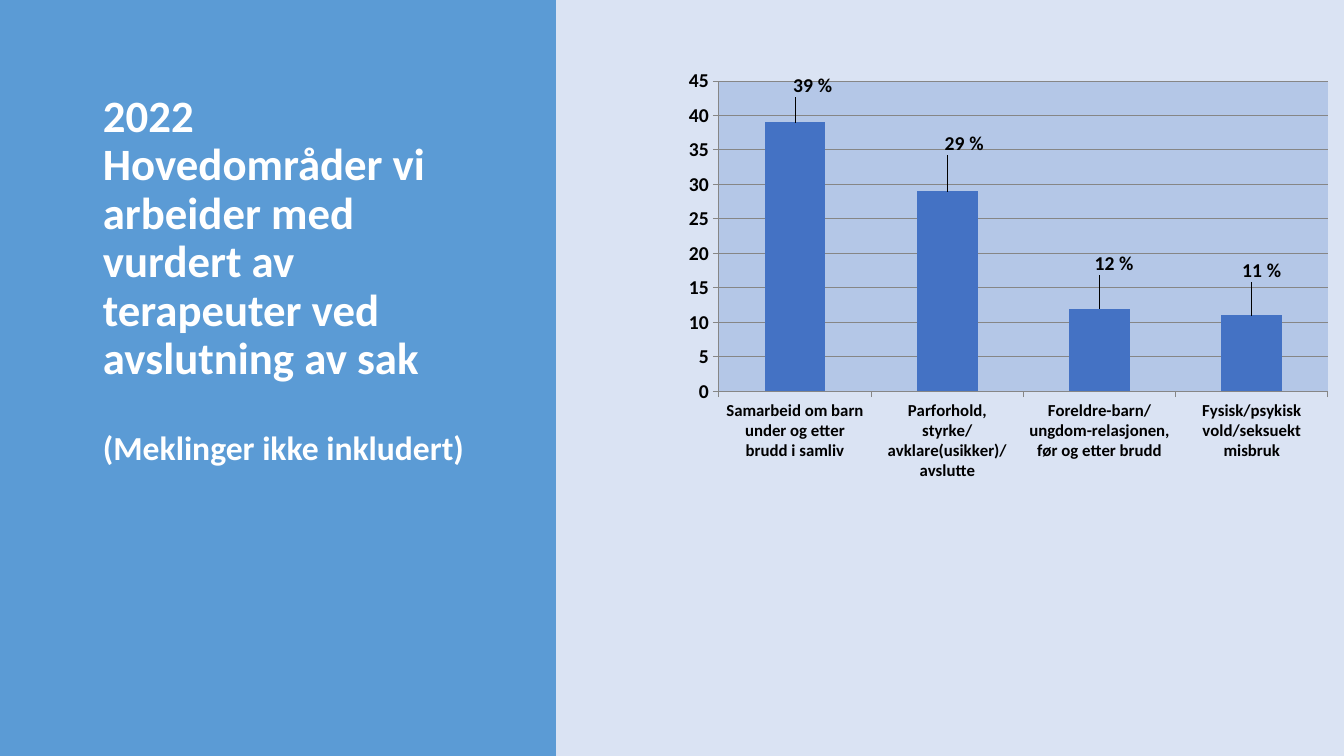
from dataclasses import dataclass

import pptx
import pptx.chart.data
import pptx.dml.color
import pptx.enum.chart
import pptx.enum.shapes
import pptx.enum.text
import pptx.oxml
import pptx.oxml.ns
import pptx.util

SLIDE_WIDTH, SLIDE_HEIGHT = 1344, 756
EMU_PER_PX = 12192000 / SLIDE_WIDTH

BACKGROUND = pptx.dml.color.RGBColor(0xDA, 0xE3, 0xF3)
PANEL = pptx.dml.color.RGBColor(0x5B, 0x9B, 0xD5)
PLOT = pptx.dml.color.RGBColor(0xB4, 0xC7, 0xE7)
BAR = pptx.dml.color.RGBColor(0x44, 0x72, 0xC4)
GRID = pptx.dml.color.RGBColor(0x86, 0x86, 0x86)
WHITE = pptx.dml.color.RGBColor(0xFF, 0xFF, 0xFF)
BLACK = pptx.dml.color.RGBColor(0x00, 0x00, 0x00)


@dataclass(frozen=True)
class Box:
    left: int
    top: int
    width: int
    height: int

    def emu(self) -> tuple[int, ...]:
        return tuple(px(n) for n in (self.left, self.top, self.width, self.height))


@dataclass(frozen=True)
class TitleLine:
    text: str
    size: int
    space_before: int = 0


@dataclass(frozen=True)
class Area:
    category: str
    percent: int
    label_right: int  # label shift from its usual place, in px
    label_down: int


PANEL_BOX = Box(0, 0, 556, SLIDE_HEIGHT)
TITLE_BOX = Box(93, 69, 415, 424)
CHART_BOX = Box(574, 69, 771, 595)
PLOT_LAYOUT = {"x": 0.188, "y": 0.019, "w": 0.79, "h": 0.522}

TITLE_LINES = [
    TitleLine("2022", 32),
    TitleLine("Hovedområder vi arbeider med vurdert av terapeuter ved avslutning av sak", 32),
    TitleLine("(Meklinger ikke inkludert)", 24, 34),
]
AREAS = [
    Area("Samarbeid om barn under og etter brudd i samliv", 39, 18, -21),
    Area("Parforhold, styrke/avklare(usikker)/avslutte", 29, 17, -32),
    Area("Foreldre-barn/ungdom-relasjonen, før og etter brudd", 12, 15, -29),
    Area("Fysisk/psykisk vold/seksuekt misbruk", 11, 10, -29),
]


def px(length: int) -> int:
    return round(length * EMU_PER_PX)


def apply(target, values: dict) -> None:
    for name, value in values.items():
        setattr(target, name, value)


def format_font(font, size: int, color, bold: bool = True) -> None:
    apply(font, {"name": "Calibri", "size": pptx.util.Pt(size), "bold": bold})
    font.color.rgb = color


def manual_layout(values: dict[str, float], inner: bool = False):
    target = '<c:layoutTarget val="inner"/>' if inner else ""
    modes = '<c:xMode val="edge"/><c:yMode val="edge"/>' if inner else ""
    sizes = "".join(f'<c:{name} val="{value:.3f}"/>' for name, value in values.items())
    return pptx.oxml.parse_xml(
        f'<c:layout {pptx.oxml.ns.nsdecls("c")}><c:manualLayout>'
        f"{target}{modes}{sizes}</c:manualLayout></c:layout>"
    )


def add_panel(slide) -> None:
    panel = slide.shapes.add_shape(pptx.enum.shapes.MSO_SHAPE.RECTANGLE, *PANEL_BOX.emu())
    panel.shadow.inherit = False
    panel.fill.solid()
    panel.fill.fore_color.rgb = PANEL
    panel.line.fill.background()


def add_title(slide) -> None:
    frame = slide.shapes.add_textbox(*TITLE_BOX.emu()).text_frame
    apply(frame, {"word_wrap": True, "vertical_anchor": pptx.enum.text.MSO_ANCHOR.MIDDLE})
    for index, line in enumerate(TITLE_LINES):
        paragraph = frame.add_paragraph() if index else frame.paragraphs[0]
        apply(paragraph, {"line_spacing": 0.9, "space_before": pptx.util.Pt(line.space_before)})
        run = paragraph.add_run()
        run.text = line.text
        format_font(run.font, line.size, WHITE)


def format_axis(axis, size: int) -> None:
    apply(axis, {
        "major_tick_mark": pptx.enum.chart.XL_TICK_MARK.OUTSIDE,
        "minor_tick_mark": pptx.enum.chart.XL_TICK_MARK.NONE,
    })
    format_font(axis.tick_labels.font, size, BLACK)
    axis.format.line.color.rgb = GRID


def format_plot_area(chart) -> None:
    plot_area = chart.plots[0]._element.getparent()
    for layout in plot_area.findall(pptx.oxml.ns.qn("c:layout")):
        plot_area.remove(layout)
    plot_area.insert(0, manual_layout(PLOT_LAYOUT, inner=True))
    plot_area.append(pptx.oxml.parse_xml(
        f'<c:spPr {pptx.oxml.ns.nsdecls("c", "a")}><a:solidFill>'
        f'<a:srgbClr val="{PLOT}"/></a:solidFill></c:spPr>'
    ))


def add_point_label(series, index: int, area: Area) -> None:
    label = series.points[index].data_label
    label.position = pptx.enum.chart.XL_LABEL_POSITION.OUTSIDE_END
    run = label.text_frame.paragraphs[0].add_run()
    run.text = f"{area.percent} %"
    format_font(run.font, 14, BLACK)
    shift = {"x": area.label_right / CHART_BOX.width, "y": area.label_down / CHART_BOX.height}
    element = series._element.find(pptx.oxml.ns.qn("c:dLbls")).findall(
        pptx.oxml.ns.qn("c:dLbl"))[index]
    for layout in element.findall(pptx.oxml.ns.qn("c:layout")):
        element.remove(layout)
    element.insert(1, manual_layout(shift))


def add_area_chart(slide) -> None:
    data = pptx.chart.data.CategoryChartData()
    data.categories = [area.category for area in AREAS]
    data.add_series("Series 1", [area.percent for area in AREAS])
    chart = slide.shapes.add_chart(
        pptx.enum.chart.XL_CHART_TYPE.COLUMN_CLUSTERED, *CHART_BOX.emu(), data).chart
    apply(chart, {"has_title": False, "has_legend": False})
    format_font(chart.font, 10, BLACK, bold=False)

    # Axes and gridlines
    format_axis(chart.category_axis, 12)
    format_axis(chart.value_axis, 14)
    apply(chart.value_axis, {
        "minimum_scale": 0, "maximum_scale": 45, "major_unit": 5, "has_major_gridlines": True,
    })
    chart.value_axis.major_gridlines.format.line.color.rgb = GRID
    format_plot_area(chart)

    # Bars and their labels
    plot = chart.plots[0]
    apply(plot, {"gap_width": 150, "vary_by_categories": False})
    series = plot.series[0]
    series.format.fill.solid()
    series.format.fill.fore_color.rgb = BAR
    for index, area in enumerate(AREAS):
        add_point_label(series, index, area)


def main() -> None:
    presentation = pptx.Presentation()
    apply(presentation, {"slide_width": px(SLIDE_WIDTH), "slide_height": px(SLIDE_HEIGHT)})
    slide = presentation.slides.add_slide(presentation.slide_layouts[6])
    slide.background.fill.solid()
    slide.background.fill.fore_color.rgb = BACKGROUND
    add_panel(slide)
    add_title(slide)
    add_area_chart(slide)
    presentation.save("out.pptx")


if __name__ == "__main__":
    main()
